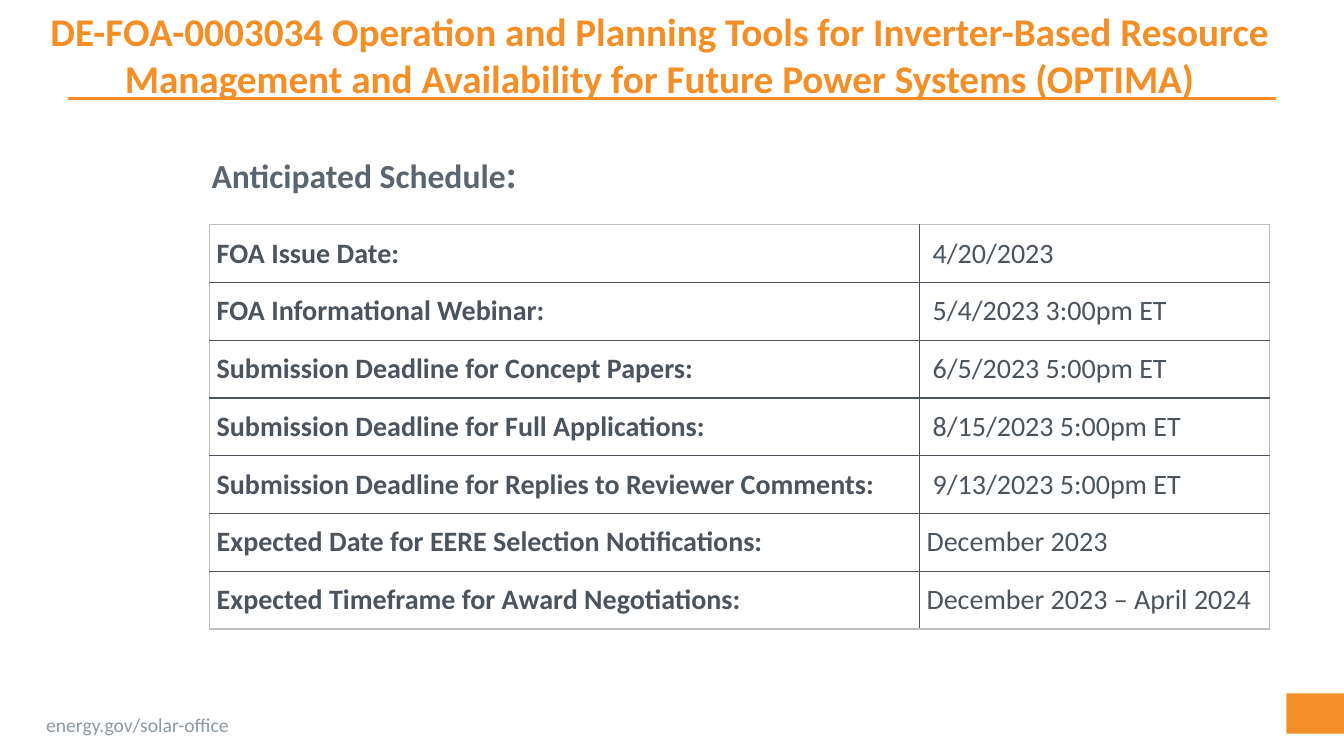
from lxml import etree
from pptx import Presentation
from pptx.dml.color import RGBColor
from pptx.enum.shapes import MSO_CONNECTOR, MSO_SHAPE
from pptx.enum.text import MSO_ANCHOR, PP_ALIGN
from pptx.oxml.ns import qn
from pptx.util import Inches, Pt

LEFT, CENTER = PP_ALIGN.LEFT, PP_ALIGN.CENTER
TOP, MIDDLE = MSO_ANCHOR.TOP, MSO_ANCHOR.MIDDLE
STRAIGHT = MSO_CONNECTOR.STRAIGHT
RECT = MSO_SHAPE.RECTANGLE

FONT = "Calibri"
COLORS = {
    "orange": "F38F26",
    "footer": "8D98A3",
    "heading": "5A6570",
    "table": "4B545D",
    "frame": "BFBFBF",
}
# Label, date, extra indent of the date in inches
SCHEDULE = [
    ("FOA Issue Date:", "4/20/2023", 0.06),
    ("FOA Informational Webinar:", "5/4/2023 3:00pm ET", 0.06),
    ("Submission Deadline for Concept Papers:", "6/5/2023 5:00pm ET", 0.06),
    ("Submission Deadline for Full Applications:", "8/15/2023 5:00pm ET", 0.06),
    ("Submission Deadline for Replies to Reviewer Comments:", "9/13/2023 5:00pm ET", 0.06),
    ("Expected Date for EERE Selection Notifications:", "December 2023", 0),
    ("Expected Timeframe for Award Negotiations:", "December 2023 – April 2024", 0),
]


def rgb(name):
    return RGBColor.from_string(COLORS[name])


def add_run(p, text, size=20, color="table", bold=False):
    r = p.add_run()
    r.text = text
    r.font.name = FONT
    r.font.size = Pt(size)
    r.font.bold = bold
    r.font.color.rgb = rgb(color)


def add_text(slide, box, text, align=LEFT, wrap=True, **fmt):
    tf = slide.shapes.add_textbox(*map(Inches, box)).text_frame
    tf.word_wrap = wrap
    tf.vertical_anchor = TOP
    p = tf.paragraphs[0]
    p.alignment = align
    add_run(p, text, **fmt)
    return tf


def set_borders(cell, sides):
    """Draw the cell borders; sides maps a:ln* tags to colour names."""
    tc_pr = cell._tc.get_or_add_tcPr()
    for i, (tag, color) in enumerate(sides.items()):
        ln = etree.Element(qn(tag), w=str(Pt(1)))
        fill = etree.SubElement(ln, qn("a:solidFill"))
        etree.SubElement(fill, qn("a:srgbClr"), val=COLORS[color])
        tc_pr.insert(i, ln)


def add_header(slide, x, y, w, h):
    # Title with the rule below it
    tf = add_text(
        slide, (x, y, w, h),
        "DE-FOA-0003034 Operation and Planning Tools for Inverter-Based Resource "
        "Management and Availability for Future Power Systems (OPTIMA)",
        align=CENTER, size=28, color="orange", bold=True)
    tf.margin_top = Inches(0.07)
    line_y = Inches(y + 0.98)
    line = slide.shapes.add_connector(
        STRAIGHT, Inches(x + 0.42), line_y, Inches(x + 12.41), line_y)
    line.line.color.rgb = rgb("orange")
    line.line.width = Pt(2)
    etree.SubElement(line._element.spPr, qn("a:effectLst"))


def add_schedule(slide, x, y, w, h):
    # Heading
    tf = add_text(slide, (x - 0.08, y - 0.8, 8.83, 0.57), "Anticipated Schedule",
                  size=24, color="heading", bold=True)
    add_run(tf.paragraphs[0], ":", size=28, color="heading", bold=True)

    # Table of dates
    rows = len(SCHEDULE)
    table = slide.shapes.add_table(rows, 2, *map(Inches, (x, y, w, h))).table
    table.first_row = table.horz_banding = False
    table.columns[0].width = Inches(7.04)
    table.columns[1].width = Inches(w - 7.04)
    for i, (label, date, indent) in enumerate(SCHEDULE):
        table.rows[i].height = Inches(h / rows)
        for j, text in enumerate((label, date)):
            cell = table.cell(i, j)
            cell.fill.background()
            cell.vertical_anchor = MIDDLE
            cell.margin_left = Inches(0.07 + j * indent)
            cell.margin_right = Inches(0.07)
            cell.margin_top = cell.margin_bottom = 0
            add_run(cell.text_frame.paragraphs[0], text, bold=j == 0)
            set_borders(cell, {
                "a:lnL": "frame" if j == 0 else "table",
                "a:lnR": "frame" if j == 1 else "table",
                "a:lnT": "frame" if i == 0 else "table",
                "a:lnB": "frame" if i == rows - 1 else "table",
            })


def add_footer(slide, x, y, w, h):
    # Web address and corner block
    add_text(slide, (x, y + 0.14, 2.04, 0.34), "energy.gov/solar-office",
             wrap=False, size=14, color="footer")
    sp = slide.shapes.add_shape(
        RECT, Inches(x + w - 0.57), Inches(y), Inches(0.57), Inches(0.4))
    sp.shadow.inherit = False
    sp.fill.solid()
    sp.fill.fore_color.rgb = rgb("orange")
    sp.line.fill.background()


def main():
    prs = Presentation()
    prs.slide_width, prs.slide_height = Inches(13.33), Inches(7.5)
    slide = prs.slides.add_slide(prs.slide_layouts[6])
    add_header(slide, 0.25, 0, 12.58, 0.75)
    add_schedule(slide, 2.08, 2.23, 10.51, 4.01)
    add_footer(slide, 0.36, 6.88, 12.97, 0.48)
    prs.save("out.pptx")


if __name__ == "__main__":
    main()
